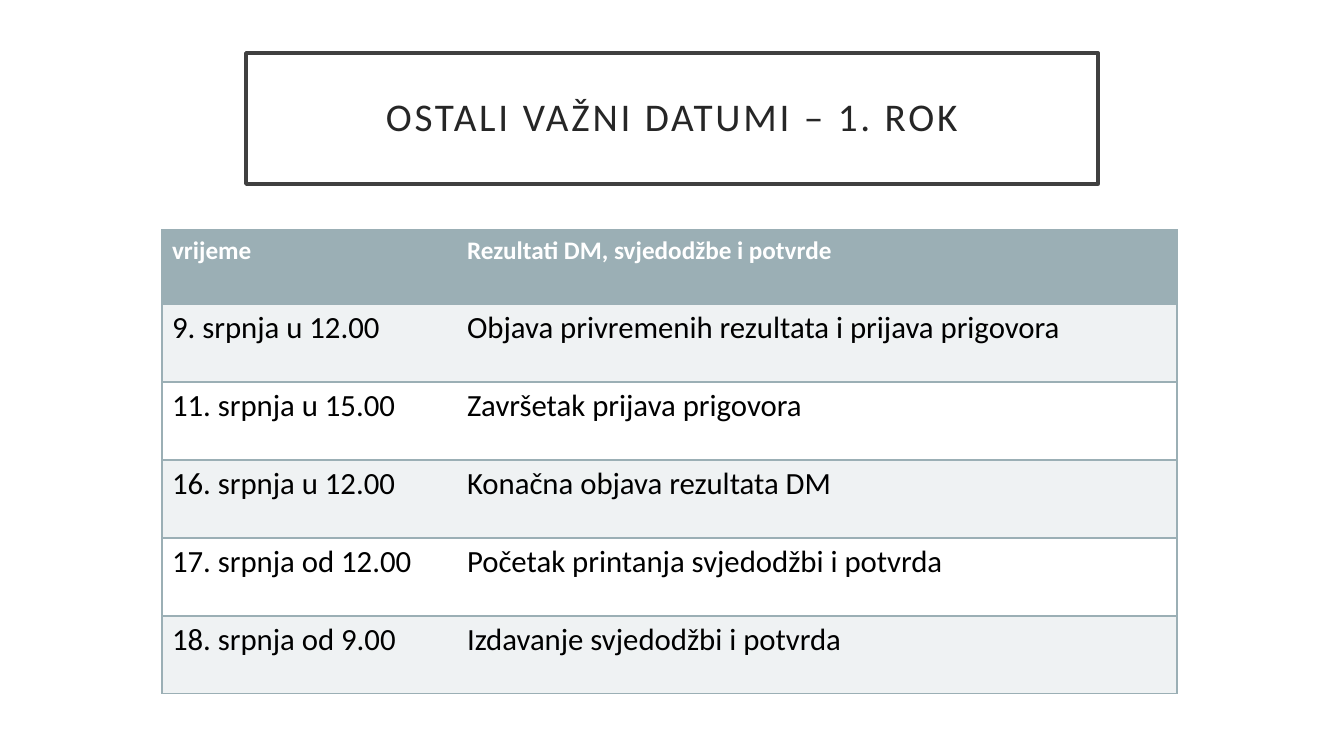
from typing import NamedTuple

import pptx
import pptx.dml.color
import pptx.enum.shapes
import pptx.enum.text
import pptx.oxml
import pptx.oxml.ns
import pptx.util

EMU_PER_PIXEL = 914400 / 100.8
FONT = "Calibri"
WHITE, BLACK = "FFFFFF", "000000"
TITLE_TEXT, TITLE_FRAME = "262626", "404040"
TEAL, PALE = "9BAFB5", "EFF2F3"

TABLE_LEFT, TABLE_TOP = 162, 230
COLUMN_WIDTHS = (295, 720)
HEADER_HEIGHT, ROW_HEIGHT = 74, 78


class DateRow(NamedTuple):
    time: str
    event: str


HEADER = DateRow("vrijeme", "Rezultati DM, svjedodžbe i potvrde")
DATES = [
    DateRow("9. srpnja u 12.00", "Objava privremenih rezultata i prijava prigovora"),
    DateRow("11. srpnja u 15.00", "Završetak prijava prigovora"),
    DateRow("16. srpnja u 12.00", "Konačna objava rezultata DM"),
    DateRow("17. srpnja od 12.00", "Početak printanja svjedodžbi i potvrda"),
    DateRow("18. srpnja od 9.00", "Izdavanje svjedodžbi i potvrda"),
]


def px(length: int) -> pptx.util.Emu:
    return pptx.util.Emu(round(length * EMU_PER_PIXEL))


def color(value: str) -> pptx.dml.color.RGBColor:
    return pptx.dml.color.RGBColor.from_string(value)


def write(frame, text: str, *, size: int, fill: str, bold: bool = False,
          centered: bool = False, line_spacing: float = 1.0, tracking: int = 0) -> None:
    """Write one paragraph; tracking is in points."""
    para = frame.paragraphs[0]
    para.line_spacing = line_spacing
    align = pptx.enum.text.PP_ALIGN
    para.alignment = align.CENTER if centered else align.LEFT
    span = para.add_run()
    span.text = text
    span.font.name = FONT
    span.font.size = pptx.util.Pt(size)
    span.font.bold = bold
    span.font.color.rgb = color(fill)
    if tracking:
        span.font._element.set("spc", str(tracking * 100))


def set_borders(cell, visible_sides: str) -> None:
    """Draw the given sides (of L, R, T, B) and clear the others."""
    properties = cell._tc.get_or_add_tcPr()
    namespace = pptx.oxml.ns.nsdecls("a")
    for index, side in enumerate("LRTB"):
        paint = "<a:noFill/>"
        if side in visible_sides:
            paint = f'<a:solidFill><a:srgbClr val="{TEAL}"/></a:solidFill>'
        border = f'<a:ln{side} {namespace} w="12700">{paint}</a:ln{side}>'
        properties.insert(index, pptx.oxml.parse_xml(border))


def add_title(page, text: str) -> None:
    box = page.shapes.add_shape(pptx.enum.shapes.MSO_SHAPE.RECTANGLE,
                                px(246), px(53), px(852), px(131))
    box.shadow.inherit = False
    box.fill.solid()
    box.fill.fore_color.rgb = color(WHITE)
    box.line.color.rgb = color(TITLE_FRAME)
    box.line.width = pptx.util.Pt(2.5)
    frame = box.text_frame
    frame.word_wrap = True
    frame.vertical_anchor = pptx.enum.text.MSO_ANCHOR.MIDDLE
    frame.margin_left = frame.margin_right = px(20)
    frame.margin_top = frame.margin_bottom = px(20)
    write(frame, text, size=28, fill=TITLE_TEXT, centered=True,
          line_spacing=0.9, tracking=2)


def add_dates(page, header: DateRow, dates: list[DateRow]) -> None:
    rows = [header, *dates]
    height = HEADER_HEIGHT + ROW_HEIGHT * len(dates)
    table = page.shapes.add_table(len(rows), len(COLUMN_WIDTHS), px(TABLE_LEFT), px(TABLE_TOP),
                                  px(sum(COLUMN_WIDTHS)), px(height)).table
    table.horz_banding = False
    for column, width in zip(table.columns, COLUMN_WIDTHS):
        column.width = px(width)
    for number, row in enumerate(rows):
        is_header = number == 0
        table.rows[number].height = px(HEADER_HEIGHT if is_header else ROW_HEIGHT)
        background = TEAL if is_header else (PALE if number % 2 else WHITE)
        for cell, text, sides in zip(table.rows[number].cells, row, ("LTB", "RTB")):
            cell.fill.solid()
            cell.fill.fore_color.rgb = color(background)
            set_borders(cell, sides)
            write(cell.text_frame, text, size=18 if is_header else 22,
                  fill=WHITE if is_header else BLACK, bold=is_header)


def main() -> None:
    deck = pptx.Presentation()
    deck.slide_width, deck.slide_height = px(1344), px(756)
    page = deck.slides.add_slide(deck.slide_layouts[6])
    page.background.fill.solid()
    page.background.fill.fore_color.rgb = color(WHITE)

    # Framed title
    add_title(page, "OSTALI VAŽNI DATUMI – 1. ROK")

    # Table of dates
    add_dates(page, HEADER, DATES)

    deck.save("out.pptx")


if __name__ == "__main__":
    main()
